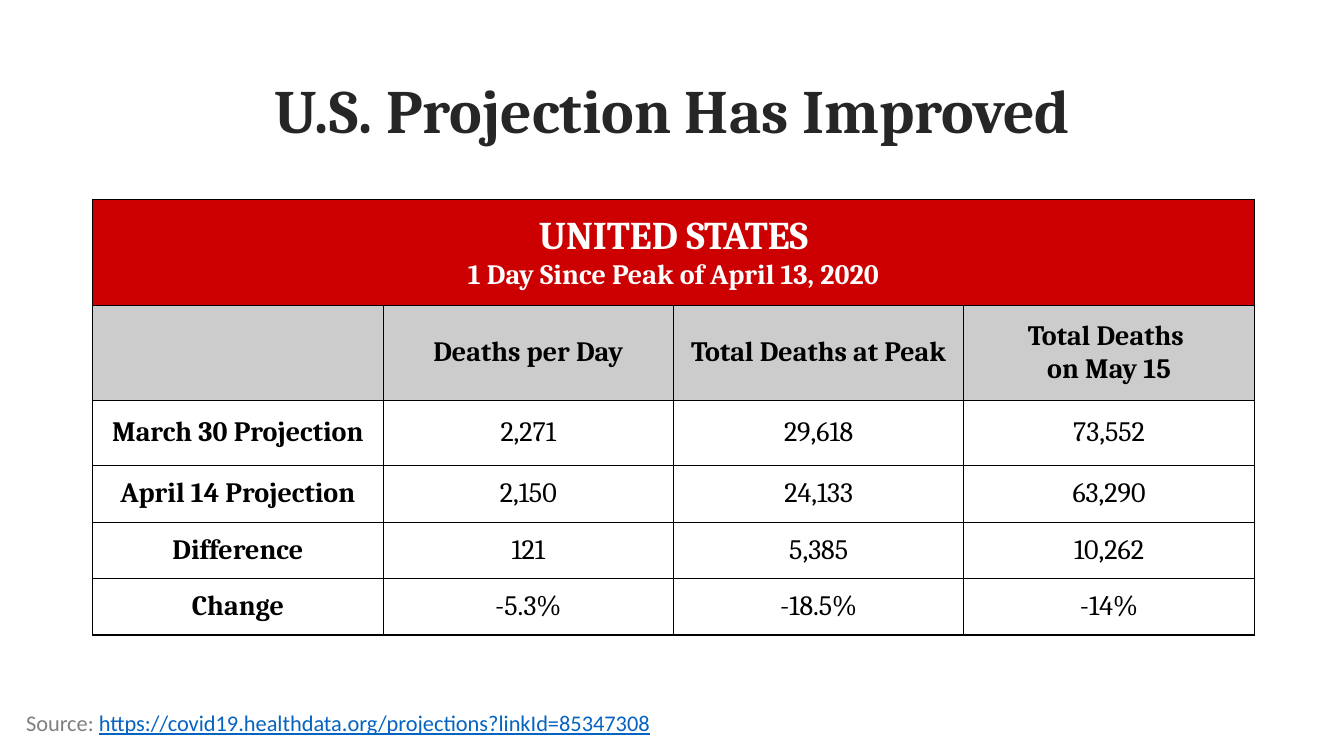
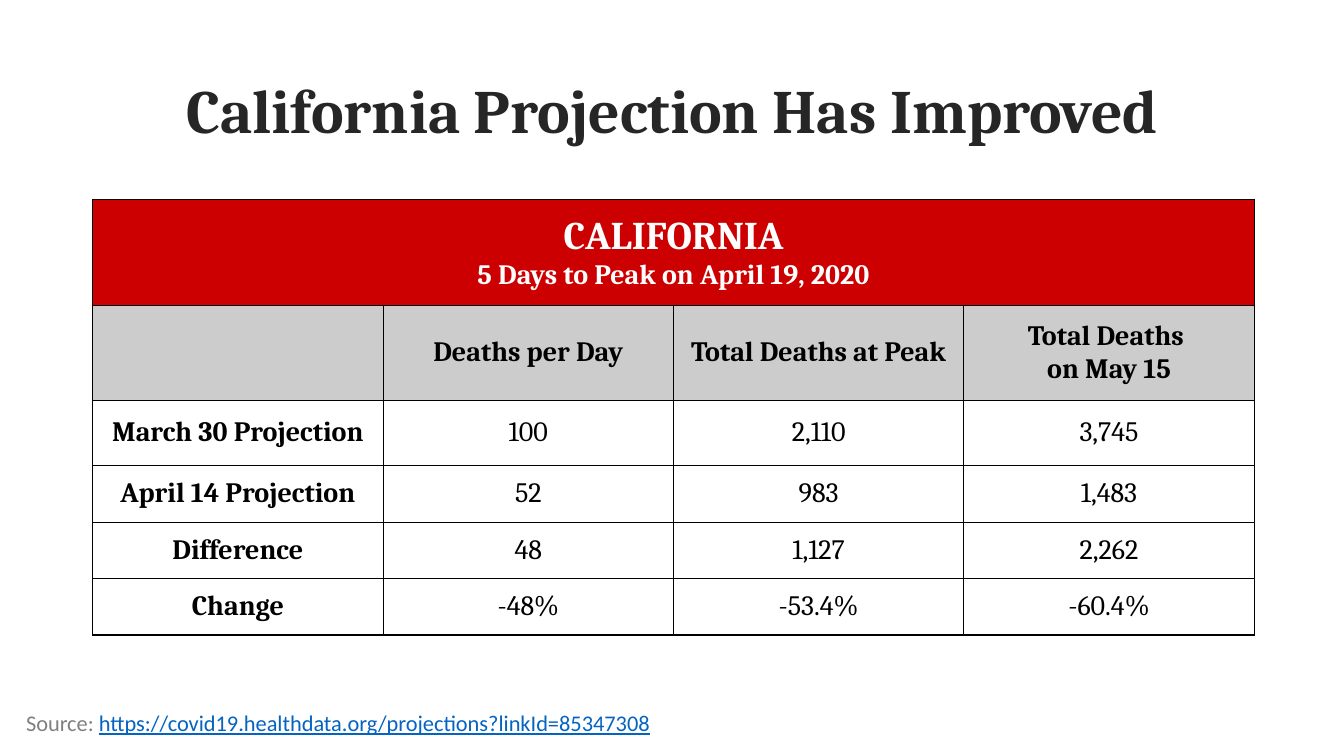
from dataclasses import dataclass

from pptx import Presentation
from pptx.dml.color import RGBColor
from pptx.enum.text import MSO_ANCHOR as Anchor, MSO_AUTO_SIZE as AutoSize, PP_ALIGN as Align
from pptx.oxml import parse_xml
from pptx.oxml.ns import nsdecls
from pptx.util import Emu, Pt

PX = 9144
SERIF, SANS = "Cambria", "Calibri"
RED, SILVER, WHITE, BLACK = "CC0000", "CCCCCC", "FFFFFF", "000000"
CHARCOAL, GRAY, LINK = "262626", "808080", "0563C1"

COLUMN_WIDTH = 288
ROW_HEIGHTS = (105, 94, 65, 56, 56, 56)
MEASURES = ("", "Deaths per Day", "Total Deaths at Peak", "Total Deaths \non May 15")
ROW_LABELS = ("March 30 Projection", "April 14 Projection", "Difference", "Change")
SOURCE_URL = "https://covid19.healthdata.org/projections?linkId=85347308"


@dataclass(frozen=True)
class Region:
    title: str
    name: str
    peak: str
    figures: tuple[tuple[str, str, str], ...]


REGIONS = (
    Region(
        "U.S. Projection Has Improved",
        "UNITED STATES",
        "1 Day Since Peak of April 13, 2020",
        (
            ("2,271", "29,618", "73,552"),
            ("2,150", "24,133", "63,290"),
            ("121", "5,385", "10,262"),
            ("-5.3%", "-18.5%", "-14%"),
        ),
    ),
    Region(
        "California Projection Has Improved",
        "CALIFORNIA",
        "5 Days to Peak on April 19, 2020",
        (
            ("100", "2,110", "3,745"),
            ("52", "983", "1,483"),
            ("48", "1,127", "2,262"),
            ("-48%", "-53.4%", "-60.4%"),
        ),
    ),
)


def px(length: int) -> Emu:
    return Emu(length * PX)


def rgb(value: str) -> RGBColor:
    return RGBColor.from_string(value)


def write(paragraph, text: str, *, size: int = 20, color: str = BLACK, font: str = SERIF,
          bold: bool = False, underline: bool = False, align: Align = Align.CENTER) -> None:
    paragraph.alignment = align
    for index, line in enumerate(text.split("\n")):
        if index:
            paragraph.add_line_break()
        if line:
            run = paragraph.add_run()
            run.text = line
            run.font.size = Pt(size)
            run.font.name = font
            run.font.bold = bold
            run.font.underline = underline
            run.font.color.rgb = rgb(color)


def style_cell(cell, fill: str | None) -> None:
    cell.vertical_anchor = Anchor.MIDDLE
    cell.margin_left = cell.margin_right = cell.margin_top = cell.margin_bottom = px(4)
    properties = cell._tc.get_or_add_tcPr()
    for side in ("lnL", "lnR", "lnT", "lnB"):
        properties.append(parse_xml(
            f'<a:{side} {nsdecls("a")} w="12700"><a:solidFill>'
            f'<a:srgbClr val="{BLACK}"/></a:solidFill></a:{side}>'
        ))
    if fill:
        cell.fill.solid()
        cell.fill.fore_color.rgb = rgb(fill)
    else:
        cell.fill.background()


def cell_fill(row: int, column: int) -> str | None:
    if row < 2:
        return (RED, SILVER)[row]
    return None if column else WHITE


def add_title(slide, text: str) -> None:
    title = slide.shapes.title
    title.left, title.top, title.width, title.height = map(px, (92, 40, 1150, 145))
    frame = title.text_frame
    frame.word_wrap = True
    frame.auto_size = AutoSize.NONE
    frame.vertical_anchor = Anchor.MIDDLE
    heading = frame.paragraphs[0]
    heading.line_spacing = 0.9
    write(heading, text, size=44, color=CHARCOAL, bold=True)


def add_projections(slide, region: Region) -> None:
    rows = [MEASURES] + [(label, *values) for label, values in zip(ROW_LABELS, region.figures)]
    column_count = len(MEASURES)
    table = slide.shapes.add_table(
        len(ROW_HEIGHTS), column_count, px(92), px(198),
        px(COLUMN_WIDTH * column_count), px(sum(ROW_HEIGHTS)),
    ).table
    table.first_row = table.horz_banding = False
    for column in table.columns:
        column.width = px(COLUMN_WIDTH)
    for row, height in enumerate(ROW_HEIGHTS):
        table.rows[row].height = px(height)
        for column in range(column_count):
            style_cell(table.cell(row, column), cell_fill(row, column))

    banner = table.cell(0, 0)
    banner.merge(table.cell(0, column_count - 1))
    heading = banner.text_frame.paragraphs[0]
    write(heading, f"{region.name}\n", size=28, color=WHITE, bold=True)
    write(heading, region.peak, color=WHITE, bold=True)

    for row, entries in enumerate(rows, start=1):
        for column, entry in enumerate(entries):
            paragraph = table.cell(row, column).text_frame.paragraphs[0]
            write(paragraph, entry, bold=row == 1 or column == 0)


def add_source(slide) -> None:
    frame = slide.shapes.add_textbox(*map(px, (16, 699, 755, 37))).text_frame
    frame.word_wrap = True
    frame.auto_size = AutoSize.SHAPE_TO_FIT_TEXT
    citation = frame.paragraphs[0]
    write(citation, "Source: ", size=16, color=GRAY, font=SANS, align=Align.LEFT)
    write(citation, SOURCE_URL, size=16, color=LINK, font=SANS, underline=True, align=Align.LEFT)


def main() -> None:
    deck = Presentation()
    deck.slide_width, deck.slide_height = px(1333), px(750)
    title_only = deck.slide_layouts[5]
    for region in REGIONS:
        slide = deck.slides.add_slide(title_only)
        add_title(slide, region.title)
        add_projections(slide, region)
        add_source(slide)
    deck.save("out.pptx")


if __name__ == "__main__":
    main()
